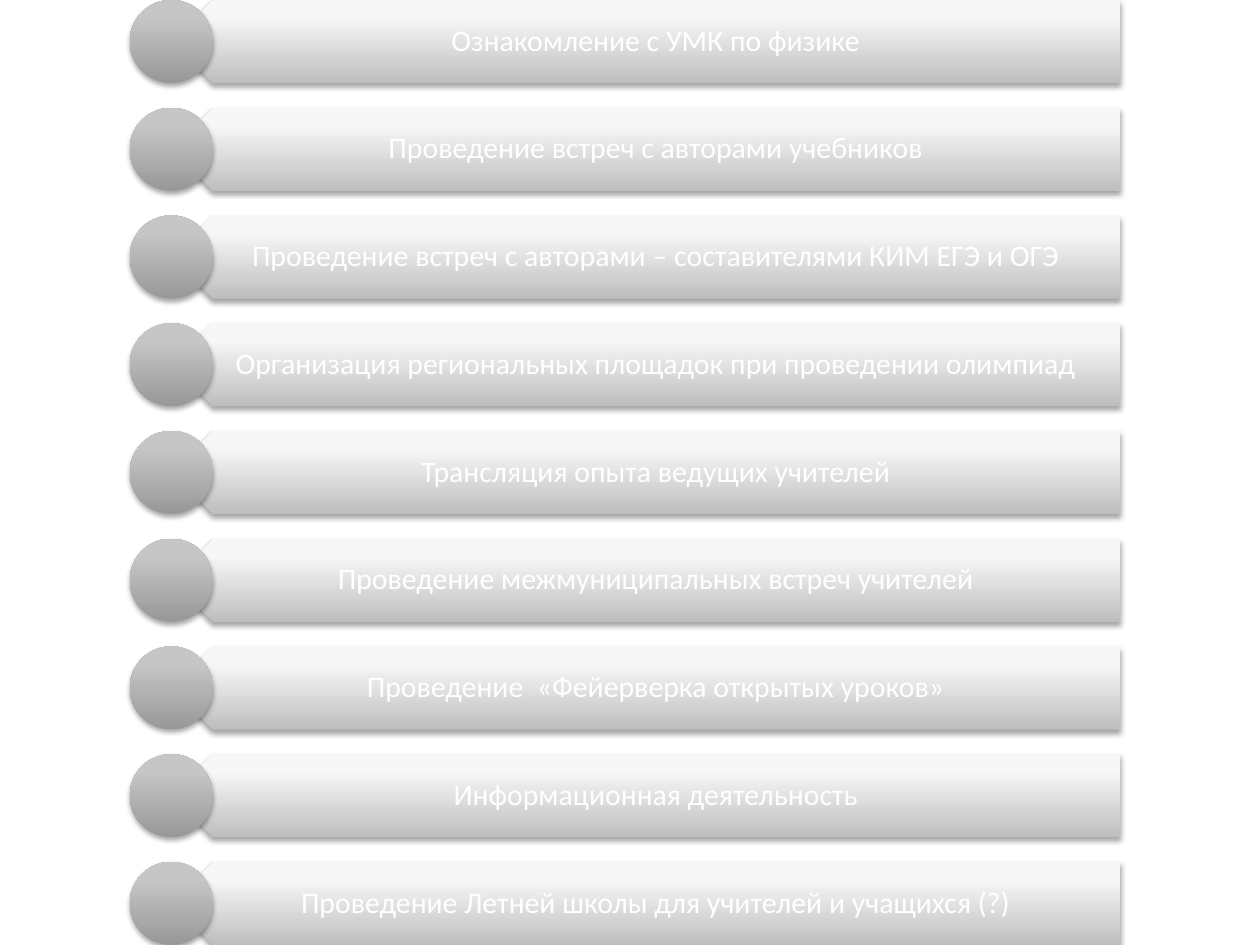
from pptx import Presentation
from pptx.dml.color import RGBColor
from pptx.enum.shapes import MSO_SHAPE
from pptx.enum.text import MSO_ANCHOR, PP_ALIGN
from pptx.oxml import parse_xml
from pptx.oxml.ns import nsdecls
from pptx.util import Inches, Pt

PENTAGON, OVAL = MSO_SHAPE.PENTAGON, MSO_SHAPE.OVAL
MIDDLE, CENTER = MSO_ANCHOR.MIDDLE, PP_ALIGN.CENTER

ACTIVITIES = [
    "Ознакомление с УМК по физике",
    "Проведение встреч с авторами учебников",
    "Проведение встреч с авторами – составителями КИМ ЕГЭ и ОГЭ",
    "Организация региональных площадок при проведении олимпиад",
    "Трансляция опыта ведущих учителей",
    "Проведение межмуниципальных встреч учителей",
    "Проведение  «Фейерверка открытых уроков»",
    "Информационная деятельность",
    "Проведение Летней школы для учителей и учащихся (?)",
]
BAR_COLORS = ["BEBEBE", "F7F7F7", "F8F8F8"]
CIRCLE_COLORS = ["989898", "C6C6C6", "C7C7C7"]
STOPS = [0, 80, 100]

SLIDE_HEIGHT = 7.5
ROW_HEIGHT = 0.66
ROW_STEP = (SLIDE_HEIGHT - ROW_HEIGHT) / (len(ACTIVITIES) - 1)
BAR_LEFT, BAR_WIDTH = 1.36, 7.53
CIRCLE_LEFT = BAR_LEFT - ROW_HEIGHT / 2


def add_shaded_shape(shapes, kind, left, top, width, colors):
    """Add a borderless shape, dark at its foot even if turned, with a shadow."""
    shape = shapes.add_shape(
        kind, Inches(left), Inches(top), Inches(width), Inches(ROW_HEIGHT))
    stops = "".join(
        f'<a:gs pos="{stop * 1000}"><a:srgbClr val="{color}"/></a:gs>'
        for stop, color in zip(STOPS, colors))
    properties = shape._element.spPr
    properties.append(parse_xml(
        f'<a:gradFill {nsdecls("a")} rotWithShape="0"><a:gsLst>{stops}</a:gsLst>'
        '<a:lin ang="16200000" scaled="0"/></a:gradFill>'))
    shape.line.fill.background()
    properties.append(parse_xml(
        f'<a:effectLst {nsdecls("a")}><a:outerShdw blurRad="{Pt(3.1)}" '
        f'dist="{Pt(1.8)}" dir="5400000" rotWithShape="0"><a:srgbClr val="000000">'
        '<a:alpha val="35000"/></a:srgbClr></a:outerShdw></a:effectLst>'))
    return shape


deck = Presentation()
deck.slide_width, deck.slide_height = Inches(10), Inches(SLIDE_HEIGHT)
page = deck.slides.add_slide(deck.slide_layouts[6])
diagram = page.shapes.add_group_shape().shapes

for row, activity in enumerate(ACTIVITIES):
    top = row * ROW_STEP
    bar = add_shaded_shape(diagram, PENTAGON, BAR_LEFT, top, BAR_WIDTH, BAR_COLORS)
    bar.rotation = 180

    # The label is its own box so that it stays upright on the turned bar.
    box = diagram.add_textbox(
        Inches(BAR_LEFT), Inches(top), Inches(BAR_WIDTH), Inches(ROW_HEIGHT))
    frame = box.text_frame
    frame.word_wrap = True
    frame.vertical_anchor = MIDDLE
    frame.margin_left, frame.margin_right = Inches(0.29), Inches(0.13)
    frame.margin_top = frame.margin_bottom = Inches(0.07)
    para = frame.paragraphs[0]
    para.text = activity
    para.alignment = CENTER
    para.line_spacing = 0.9
    para.font.name = "Calibri"
    para.font.size = Pt(17)
    para.font.color.rgb = RGBColor.from_string("FFFFFF")

    add_shaded_shape(diagram, OVAL, CIRCLE_LEFT, top, ROW_HEIGHT, CIRCLE_COLORS)

deck.save("out.pptx")
